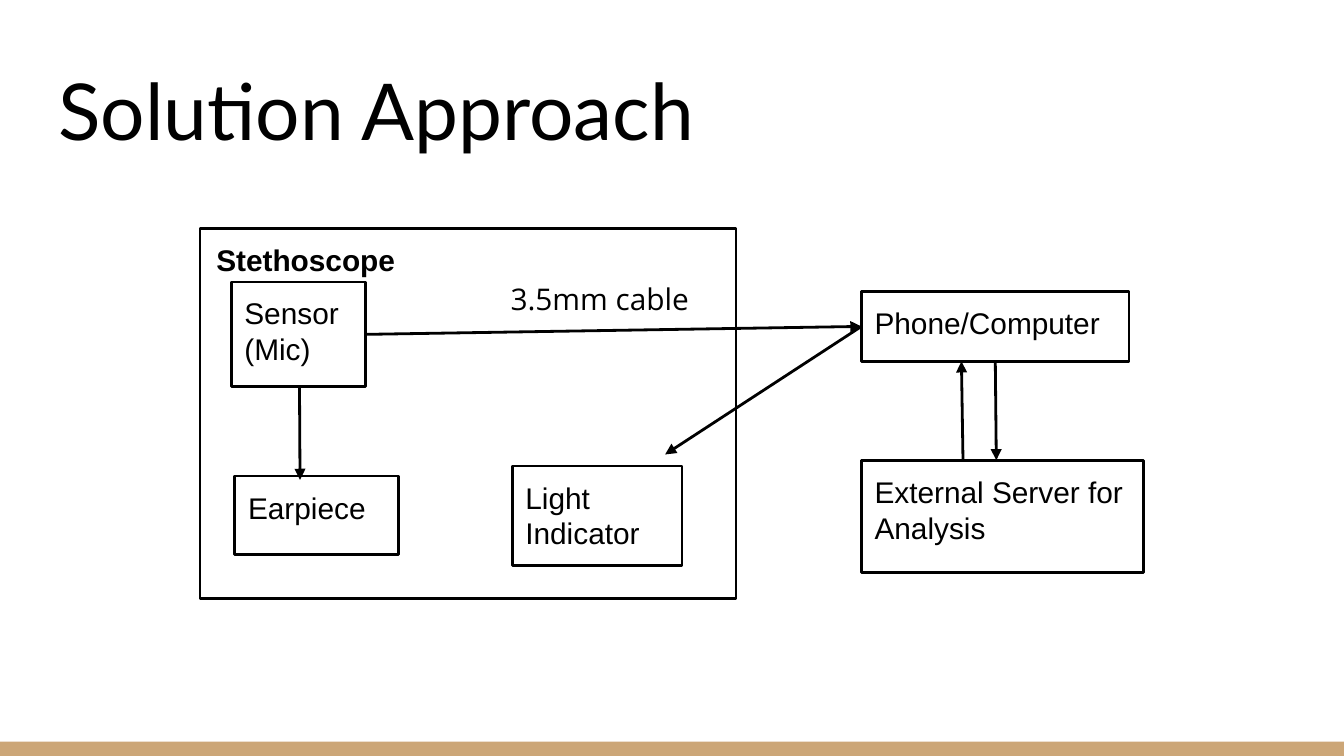
from pptx import Presentation
from pptx.dml.color import RGBColor
from pptx.enum.shapes import MSO_CONNECTOR, MSO_SHAPE
from pptx.enum.text import MSO_ANCHOR
from pptx.oxml.ns import qn
from pptx.util import Cm, Pt
from lxml.etree import SubElement

COLORS = {"ink": "000000", "bar": "CCA677"}
INSET = Cm(0.25)
LINE_WIDTH = Pt(1.5)
FRAME_FORMAT = {
    "word_wrap": True,
    "margin_left": INSET,
    "margin_right": INSET,
    "margin_top": INSET,
    "margin_bottom": INSET,
}
BODY = {"name": "Arial", "size": Pt(16), "bold": False}
HEADING = {**BODY, "bold": True}
CABLE = {**BODY, "name": "Open Sans"}
TITLE = {**BODY, "name": "Lato", "size": Pt(42)}

BOXES = [
    ("", 3.78, 4.32, 10.13, 6.99),
    ("Sensor\n(Mic)", 4.37, 5.33, 2.54, 1.98),
    ("Earpiece", 4.44, 9.0, 3.1, 1.48),
    ("Phone/Computer", 16.28, 5.51, 5.06, 1.32),
    ("External Server for Analysis", 16.28, 8.7, 5.34, 2.12),
    ("Light Indicator", 9.68, 8.81, 3.21, 1.88),
]
ARROWS = [
    (5.66, 7.31, 5.67, 9.07),
    (18.81, 6.83, 18.83, 8.7),
    (18.2, 8.72, 18.17, 6.83),
    (16.28, 6.17, 12.57, 8.59),
    (6.92, 6.32, 16.28, 6.17),
]


def color(key):
    """Return a named colour."""
    return RGBColor.from_string(COLORS[key])


def apply(target, values):
    """Set each format value on the target."""
    for name, value in values.items():
        setattr(target, name, value)


def write(shape, text, font, anchor=MSO_ANCHOR.TOP):
    """Fill a shape with one paragraph per line of text."""
    frame = shape.text_frame
    apply(frame, {**FRAME_FORMAT, "vertical_anchor": anchor})
    frame.text = text
    for para in frame.paragraphs:
        para.alignment = 1
        for span in para.runs:
            apply(span.font, font)
            span.font.color.rgb = color("ink")


def add_label(shapes, text, place, font, anchor=MSO_ANCHOR.TOP):
    """Add a plain text box."""
    write(shapes.add_textbox(*map(Cm, place)), text, font, anchor)


def add_box(shapes, text, *place):
    """Add an outlined box with optional text."""
    box = shapes.add_shape(MSO_SHAPE.RECTANGLE, *map(Cm, place))
    box.shadow.inherit = False
    box.fill.background()
    box.line.color.rgb = color("ink")
    box.line.width = LINE_WIDTH
    if text:
        write(box, text, BODY)


def add_arrow(shapes, *ends):
    """Add a straight arrow with its head at the second point."""
    arrow = shapes.add_connector(MSO_CONNECTOR.STRAIGHT, *map(Cm, ends))
    arrow.line.color.rgb = color("ink")
    arrow.line.width = LINE_WIDTH
    SubElement(arrow.line._get_or_add_ln(), qn("a:tailEnd"), type="triangle")
    SubElement(arrow._element.spPr, qn("a:effectLst"))


def add_bar(shapes, *place):
    """Add a filled band without an outline."""
    bar = shapes.add_shape(MSO_SHAPE.RECTANGLE, *map(Cm, place))
    bar.shadow.inherit = False
    bar.fill.solid()
    bar.fill.fore_color.rgb = color("bar")
    bar.line.fill.background()


def main():
    """Build the solution approach slide."""
    deck = Presentation()
    apply(deck, {"slide_width": Cm(25.4), "slide_height": Cm(14.29)})
    page = deck.slides.add_slide(deck.slide_layouts[6])
    add_bar(page.shapes, 0, 14.02, 25.4, 0.27)
    add_label(page.shapes, "Solution Approach", (0.86, 0.89, 23.67, 2.31),
              TITLE, MSO_ANCHOR.BOTTOM)
    diagram = page.shapes.add_group_shape().shapes
    for box in BOXES:
        add_box(diagram, *box)
    for arrow in ARROWS:
        add_arrow(diagram, *arrow)
    add_label(diagram, "Stethoscope", (3.84, 4.32, 4.29, 1.32), HEADING)
    add_label(page.shapes, "3.5mm cable", (9.4, 5.05, 4.22, 1.04), CABLE)
    deck.save("out.pptx")


if __name__ == "__main__":
    main()
